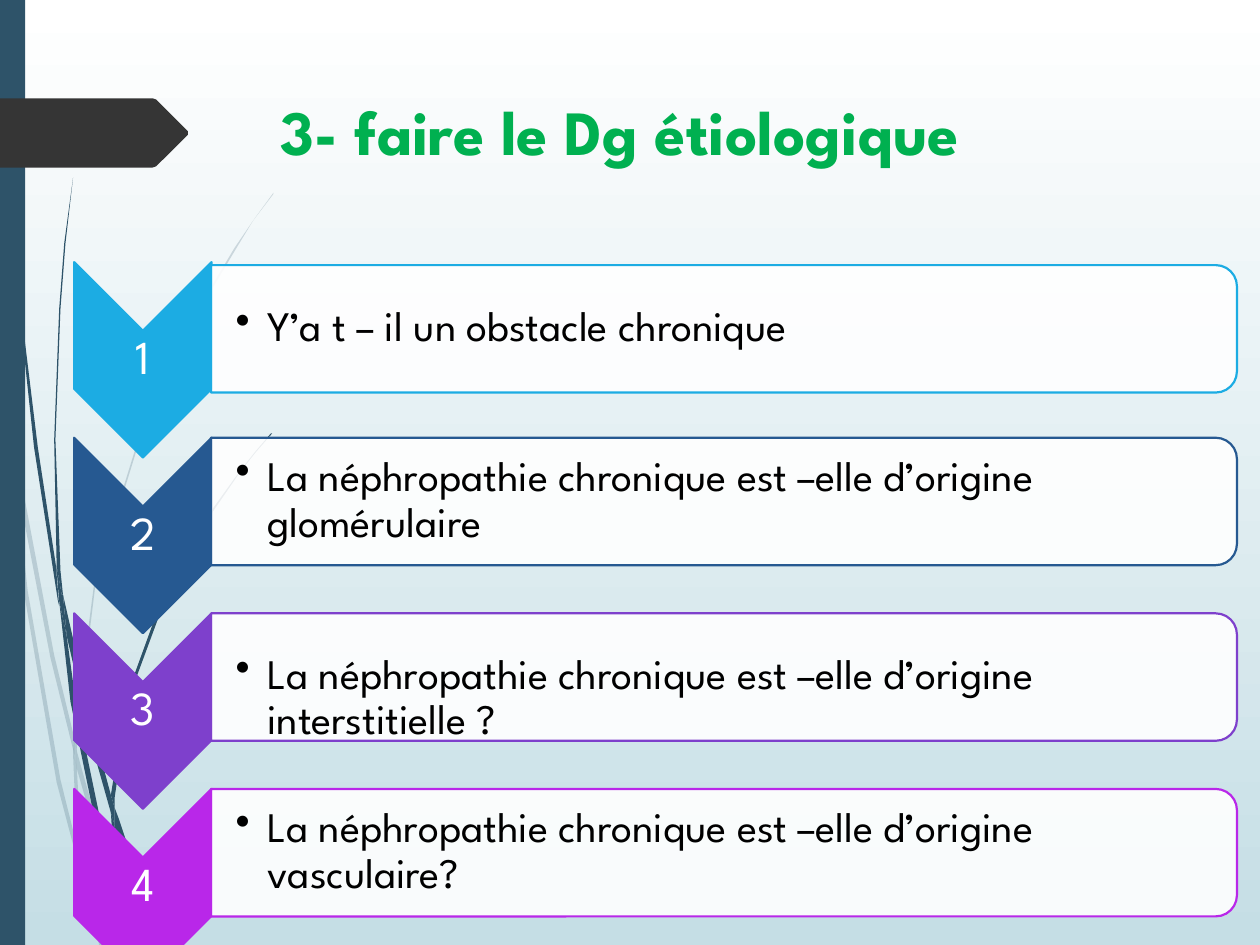
from dataclasses import dataclass

import lxml.etree
import pptx
import pptx.dml.color
import pptx.enum.shapes
import pptx.enum.text
import pptx.oxml.ns
import pptx.util

Cm = pptx.util.Cm
Pt = pptx.util.Pt
MSO_SHAPE = pptx.enum.shapes.MSO_SHAPE
ANCHOR = pptx.enum.text.MSO_ANCHOR
ALIGN = pptx.enum.text.PP_ALIGN
qn = pptx.oxml.ns.qn


@dataclass(frozen=True)
class Theme:
    font: str = "League Spartan"
    title_size: int = 36
    number_size: int = 27
    body_size: int = 24
    outline: float = 1.25
    title: str = "00B050"
    white: str = "FFFFFF"
    black: str = "000000"
    sky: str = "C5DEE5"
    stem: str = "2E5369"
    tab: str = "353535"


@dataclass(frozen=True)
class Box:
    """Position and size in centimetres."""
    left: float
    top: float
    width: float
    height: float

    def lengths(self) -> tuple:
        return Cm(self.left), Cm(self.top), Cm(self.width), Cm(self.height)

    def lowered(self, distance: float) -> "Box":
        return Box(self.left, self.top + distance, self.width, self.height)


@dataclass(frozen=True)
class Step:
    number: str
    question: str
    color: str
    panel_shift: float = 0
    text_shift: float = 0


THEME = Theme()
UNIT = Cm(2.54) / 100  # freeform points are in hundredths of an inch

STEP_GAP = 3.54
CHEVRON = Box(0.91, 5.87, 3.94, 2.77)
NUMBER = Box(1.5, 6.65, 2.77, 1.19)
PANEL = Box(13.31, -3.77, 2.57, 20.68)
QUESTION = Box(4.27, 5.4, 20.55, 2.31)

STEPS = [
    Step("1", "Y’a t – il un obstacle chronique", "1CACE3", panel_shift=0.06),
    Step("2", "La néphropathie chronique est –elle d’origine glomérulaire", "265991"),
    Step("3", "La néphropathie chronique est –elle d’origine interstitielle ?", "7E40CC",
         text_shift=0.44),
    Step("4", "La néphropathie chronique est –elle d’origine vasculaire?", "B927E9"),
]

PALE_STEMS = [
    [(8, 350), (6, 322), (0, 282), (0, 299), (7, 344)],
    [(40, 522), (59, 599), (59, 586), (43, 520), (10, 345), (12, 376)],
    [(64, 607), (61, 596), (61, 610), (85, 694), (104, 751), (108, 751), (88, 692)],
    [(83, 751), (86, 751), (73, 711)],
    [(64, 683), (48, 619), (22, 469), (12, 376), (8, 350), (19, 470), (45, 621),
     (64, 693), (70, 714), (69, 707)],
    [(58, 599), (60, 646), (64, 683), (67, 692), (73, 711), (72, 706), (63, 646),
     (61, 610), (61, 608)],
    [(61, 584), (76, 462), (111, 349), (159, 245), (187, 198), (201, 175), (217, 154),
     (217, 153), (201, 175), (186, 197), (158, 244), (110, 348), (75, 461), (59, 584),
     (59, 586), (61, 596)],
    [(70, 714), (79, 751), (82, 751)],
    [(61, 608), (61, 610), (61, 596), (59, 586), (58, 599)],
    [(67, 692), (65, 683), (69, 707), (70, 714), (82, 751), (83, 751), (73, 711)],
]

DARK_STEMS = [
    [(5, 110), (14, 233), (27, 355), (46, 477), (47, 481), (45, 457), (45, 453),
     (30, 355), (15, 232), (6, 109), (4, 48), (3, 0), (2, 0), (3, 48)],
    [(73, 592), (88, 645), (88, 633), (88, 631), (77, 590), (50, 472), (53, 505)],
    [(94, 649), (91, 641), (91, 656), (109, 708), (126, 749), (130, 749), (113, 706)],
    [(91, 691), (81, 657), (60, 556), (53, 505), (47, 477), (56, 557), (77, 659),
     (92, 708), (97, 722), (96, 717)],
    [(50, 472), (48, 453), (44, 349), (48, 245), (52, 193), (58, 141), (51, 193),
     (47, 245), (43, 349), (45, 449), (49, 472)],
    [(110, 749), (113, 749), (100, 719)],
    [(47, 477), (53, 505), (50, 472), (49, 472), (45, 449), (45, 453)],
    [(91, 633), (103, 552), (131, 476), (169, 406), (191, 374), (203, 359), (216, 344),
     (215, 344), (203, 358), (191, 373), (168, 405), (129, 474), (101, 551), (88, 631),
     (91, 641)],
    [(97, 722), (105, 749), (108, 749)],
    [(88, 645), (91, 691), (96, 706), (100, 719), (100, 716), (91, 656), (90, 651)],
    [(88, 645), (90, 651), (91, 656), (91, 641), (88, 631), (88, 633)],
    [(96, 706), (91, 691), (96, 717), (97, 722), (108, 749), (110, 749), (100, 719)],
]

TAB = [(149, 107), (124, 132), (121, 133), (0, 133), (0, 78), (121, 78), (124, 79),
       (149, 104)]


def rgb(color: str) -> pptx.dml.color.RGBColor:
    return pptx.dml.color.RGBColor.from_string(color)


def paint(shape, fill: str, opacity: int = 100, line: str = "") -> None:
    shape.shadow.inherit = False
    shape.fill.solid()
    shape.fill.fore_color.rgb = rgb(fill)
    if opacity < 100:
        color = shape.element.spPr.find(qn("a:solidFill")).find(qn("a:srgbClr"))
        lxml.etree.SubElement(color, qn("a:alpha"), val=str(opacity * 1000))
    if line:
        shape.line.color.rgb = rgb(line)
        shape.line.width = Pt(THEME.outline)
    else:
        shape.line.fill.background()


def add_outline(slide, points: list, fill: str, opacity: int = 100) -> None:
    builder = slide.shapes.build_freeform(*points[0], scale=UNIT)
    builder.add_line_segments(points[1:], close=True)
    paint(builder.convert_to_shape(), fill, opacity)


def add_preset(slide, kind, box: Box, fill: str, opacity: int = 100,
               line: str = "", rotation: int = 0) -> None:
    shape = slide.shapes.add_shape(kind, *box.lengths())
    shape.rotation = rotation
    paint(shape, fill, opacity, line)


def add_text(slide, box: Box, text: str, size: int, color: str,
             anchor=ANCHOR.MIDDLE, side_inset: float = 0.05, inset: float = 0.05):
    frame = slide.shapes.add_textbox(*box.lengths()).text_frame
    frame.word_wrap = True
    frame.vertical_anchor = anchor
    frame.margin_left = Cm(side_inset)
    frame.margin_right = frame.margin_top = frame.margin_bottom = Cm(inset)
    paragraph = frame.paragraphs[0]
    paragraph.text = text
    paragraph.font.name = THEME.font
    paragraph.font.size = Pt(size)
    paragraph.font.color.rgb = rgb(color)
    return paragraph


def add_bullet(paragraph, indent: float) -> None:
    properties = paragraph._p.get_or_add_pPr()
    properties.set("marL", str(Cm(indent)))
    properties.set("indent", str(-Cm(indent)))
    lxml.etree.SubElement(properties, qn("a:buChar"), char="•")
    # The bullet must precede the default run properties
    properties.append(properties.find(qn("a:defRPr")))


def add_step(slide, step: Step, drop: float) -> None:
    add_preset(slide, MSO_SHAPE.CHEVRON, CHEVRON.lowered(drop), step.color,
               line=step.color, rotation=90)
    number = add_text(slide, NUMBER.lowered(drop), step.number, THEME.number_size, THEME.white)
    number.alignment = ALIGN.CENTER
    number.line_spacing = 0.9
    drop += step.panel_shift
    add_preset(slide, MSO_SHAPE.ROUND_2_SAME_RECTANGLE, PANEL.lowered(drop), THEME.white,
               opacity=90, line=step.color, rotation=90)
    question = add_text(slide, QUESTION.lowered(drop + step.text_shift), step.question,
                        THEME.body_size, THEME.black, side_inset=0.48)
    question.line_spacing = 0.9
    add_bullet(question, 0.64)


def main() -> None:
    presentation = pptx.Presentation()
    presentation.slide_width, presentation.slide_height = Cm(25.4), Cm(19.05)
    slide = presentation.slides.add_slide(presentation.slide_layouts[6])

    # Background gradient, white at the top
    background = slide.background.fill
    background.gradient()
    background.gradient_angle = 270
    for stop, color, position in zip(background.gradient_stops, (THEME.white, THEME.sky), (0, 1)):
        stop.color.rgb = rgb(color)
        stop.position = position

    # Stems, side band and tab
    for stems, opacity in ((PALE_STEMS, 20), (DARK_STEMS, 100)):
        for points in stems:
            add_outline(slide, points, THEME.stem, opacity)
    add_preset(slide, MSO_SHAPE.RECTANGLE, Box(0, 0, 0.51, 19.05), THEME.stem)
    add_outline(slide, TAB, THEME.tab)

    # Numbered questions
    for index, step in enumerate(STEPS):
        add_step(slide, step, index * STEP_GAP)

    # Title
    title = add_text(slide, Box(5.41, 1.73, 18.31, 2.64), "3- faire le Dg étiologique",
                     THEME.title_size, THEME.title, ANCHOR.TOP, side_inset=0.25, inset=0.13)
    title.font.bold = True

    presentation.save("out.pptx")


if __name__ == "__main__":
    main()
